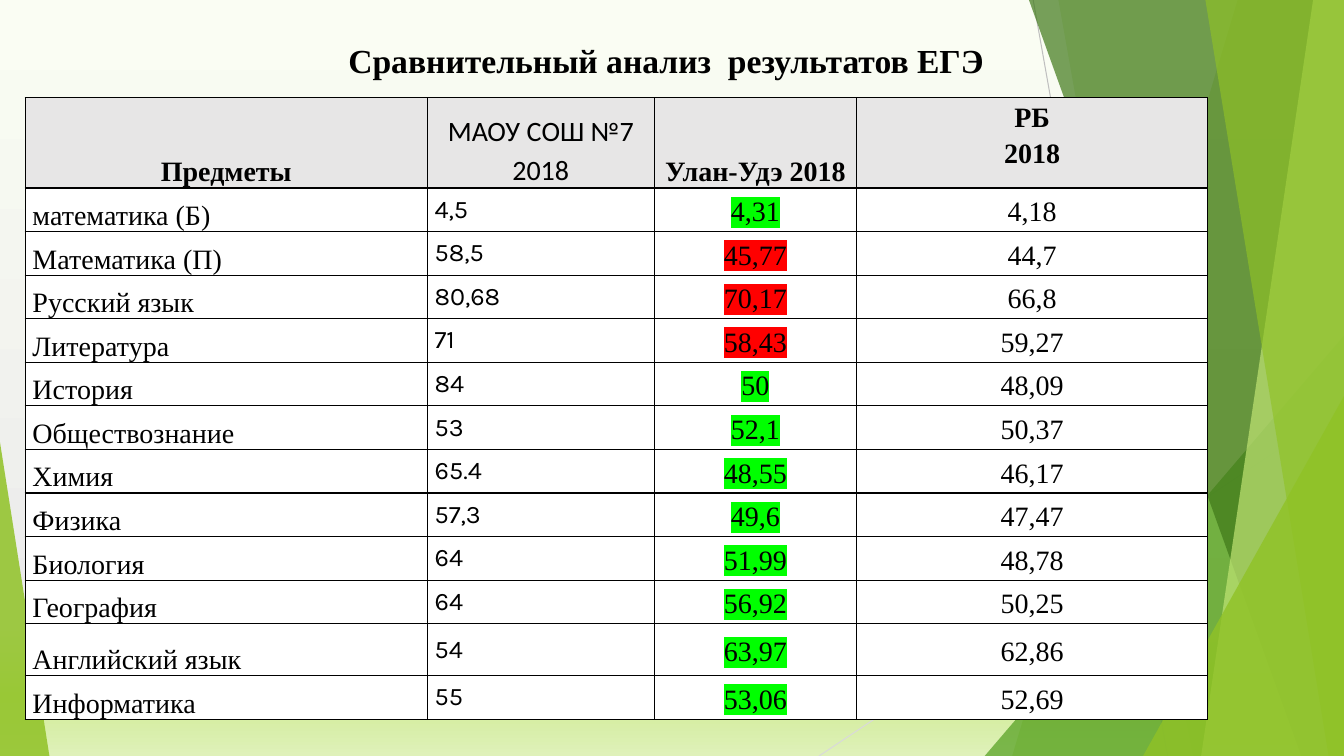
from lxml import etree
from pptx import Presentation
from pptx.dml.color import RGBColor
from pptx.enum.shapes import MSO_CONNECTOR, MSO_SHAPE
from pptx.enum.text import MSO_ANCHOR, MSO_AUTO_SIZE, PP_ALIGN
from pptx.oxml.ns import qn
from pptx.util import Pt

LEFT, MID = PP_ALIGN.LEFT, PP_ALIGN.CENTER
TOP, CENTER, BOTTOM = MSO_ANCHOR.TOP, MSO_ANCHOR.MIDDLE, MSO_ANCHOR.BOTTOM
GROW = MSO_AUTO_SIZE.SHAPE_TO_FIT_TEXT
STRAIGHT = MSO_CONNECTOR.STRAIGHT
TRIANGLE = MSO_SHAPE.ISOSCELES_TRIANGLE

BLACK = RGBColor(0x00, 0x00, 0x00)
WHITE = RGBColor(0xFF, 0xFF, 0xFF)
GRAY = RGBColor(0xE7, 0xE6, 0xE6)
SILVER = RGBColor(0xBF, 0xBF, 0xBF)
PALE = RGBColor(0xD9, 0xD9, 0xD9)
LIME = RGBColor(0x90, 0xC2, 0x26)
LEAF = RGBColor(0x54, 0xA0, 0x21)
MOSS = RGBColor(0x3F, 0x78, 0x19)
MINT = RGBColor(0xC0, 0xE4, 0x74)
GREEN = RGBColor(0x00, 0xFF, 0x00)
RED = RGBColor(0xFF, 0x00, 0x00)
SKY = [
    (0, RGBColor(0xFA, 0xFD, 0xF3)),
    (83, RGBColor(0xEB, 0xEB, 0xEB)),
    (92, RGBColor(0xD0, 0xEB, 0x96)),
    (100, RGBColor(0xDF, 0xF1, 0xB9)),
]

TITLE = "Сравнительный анализ  результатов ЕГЭ "
HEAD = ["Предметы", "МАОУ СОШ №7 2018", "Улан-Удэ 2018", "РБ\n2018"]
SCORES = [
    ("математика (Б)", "4,5", "4,31", "4,18"),
    ("Математика (П)", "58,5", "45,77", "44,7"),
    ("Русский язык", "80,68", "70,17", "66,8"),
    ("Литература", "71", "58,43", "59,27"),
    ("История", "84", "50", "48,09"),
    ("Обществознание", "53", "52,1", "50,37"),
    ("Химия", "65.4", "48,55", "46,17"),
    ("Физика", "57,3", "49,6", "47,47"),
    ("Биология", "64", "51,99", "48,78"),
    ("География", "64", "56,92", "50,25"),
    ("Английский язык", "54", "63,97", "62,86"),
    ("Информатика", "55", "53,06", "52,69"),
]
RED_ROWS = {"Математика (П)", "Русский язык", "Литература"}
TALL_ROW = "Английский язык"

WIDE, HIGH = 960, 540
COLS = [287.3, 162, 144.7, 250.6]
HEAD_H, ROW_H, TALL_H = 64.5, 31.14, 37.2
TABLE_X, TABLE_Y = 18, 69.8

RAYS = [((738, 0), (834, HIGH), SILVER), ((WIDE, 290), (585, HIGH), PALE)]
BANDS = [
    ("band", (884, 723), LIME, 30),
    ("band", (756, 852), LIME, 20),
    ("peak", (703.4, 239.8, 256.6, 300.2, 1), LEAF, 72),
    ("band", (735, 929.5), MOSS, 70),
    ("band", (938, 858), MINT, 70),
    ("band", (861, 949), LIME, 65),
    ("peak", (816.5, 283, 143.5, 257, 1), LIME, 80),
    ("peak", (0, 316, 35.3, 224, 0), LIME, 85),
]

SERIF = {"name": "Times New Roman", "size": Pt(20), "bold": False}
BOLD = SERIF | {"bold": True}
SANS = SERIF | {"name": "Calibri"}
KARLA = {"name": "Karla", "size": Pt(18), "bold": False}
HEAD_FORM = [
    (BOLD, MID, BOTTOM, 1.15),
    (SANS, MID, BOTTOM, 1.15),
    (BOLD, MID, BOTTOM, 1.15),
    (BOLD, MID, TOP, 1.15),
]
BODY_FORM = [
    (SERIF, LEFT, BOTTOM, 1.15),
    (KARLA, LEFT, CENTER, 1),
    (SERIF, MID, CENTER, 1.15),
    (SERIF, MID, CENTER, 1.15),
]
INSET = {"margin_left": Pt(5.2), "margin_right": Pt(5.2),
         "margin_top": 0, "margin_bottom": 0}


def assign(item, form):
    for key, value in form.items():
        setattr(item, key, value)


def add_color(parent, color):
    return etree.SubElement(parent, qn("a:srgbClr"), val=str(color))


def paint_sky(slide):
    fill = slide.background.fill
    fill.gradient()
    fill.gradient_angle = 270
    stops = slide.background._cSld.find(".//" + qn("a:gsLst"))
    for stop in list(stops):
        stops.remove(stop)
    for place, color in SKY:
        stop = etree.SubElement(stops, qn("a:gs"), pos=str(place * 1000))
        add_color(stop, color)


def add_ray(slide, start, end, color):
    ray = slide.shapes.add_connector(STRAIGHT, *map(Pt, start + end))
    ray.line.color.rgb = color
    ray.line.width = Pt(0.75)
    etree.SubElement(ray._element.spPr, qn("a:effectLst"))


def add_band(slide, kind, geom, color, alpha):
    if kind == "band":
        top, foot = geom
        edge = [(WIDE, 0), (WIDE, HIGH), (foot, HIGH)]
        pen = slide.shapes.build_freeform(Pt(top), 0)
        pen.add_line_segments([(Pt(x), Pt(y)) for x, y in edge])
        shape = pen.convert_to_shape()
    else:
        shape = slide.shapes.add_shape(TRIANGLE, *map(Pt, geom[:4]))
        shape.adjustments[0] = geom[4]
    shape.shadow.inherit = False
    shape.fill.solid()
    shape.fill.fore_color.rgb = color
    shape.line.fill.background()
    tone = shape._element.spPr.find(qn("a:solidFill")).find(qn("a:srgbClr"))
    etree.SubElement(tone, qn("a:alpha"), val=str(alpha * 1000))


def write(frame, text, font, align, space, mark=None):
    frame.text = text
    for para in frame.paragraphs:
        assign(para, {"alignment": align, "line_spacing": space})
        for run in para.runs:
            assign(run.font, font)
            run.font.color.rgb = BLACK
            if mark:
                light = etree.Element(qn("a:highlight"))
                add_color(light, mark)
                run._r.rPr.find(qn("a:latin")).addprevious(light)


def add_border(cell):
    props = cell._tc.get_or_add_tcPr()
    for spot, side in enumerate(("lnL", "lnR", "lnT", "lnB")):
        line = etree.Element(qn("a:" + side), w=str(Pt(1)))
        add_color(etree.SubElement(line, qn("a:solidFill")), BLACK)
        props.insert(spot, line)


def add_scores(slide):
    rows = [HEAD, *SCORES]
    highs = [HEAD_H] + [TALL_H if row[0] == TALL_ROW else ROW_H for row in SCORES]
    size = (TABLE_X, TABLE_Y, sum(COLS), sum(highs))
    table = slide.shapes.add_table(len(rows), len(COLS), *map(Pt, size)).table
    assign(table, {"first_row": False, "horz_banding": False})
    for col, wide in zip(table.columns, COLS):
        col.width = Pt(wide)
    for r, (row, high) in enumerate(zip(rows, highs)):
        table.rows[r].height = Pt(high)
        forms = BODY_FORM if r else HEAD_FORM
        for c, (text, form) in enumerate(zip(row, forms)):
            font, align, anchor, space = form
            cell = table.cell(r, c)
            assign(cell, INSET | {"vertical_anchor": anchor})
            cell.fill.solid()
            cell.fill.fore_color.rgb = WHITE if r else GRAY
            mark = None
            if r and c == 2:
                mark = RED if row[0] in RED_ROWS else GREEN
            write(cell.text_frame, text, font, align, space, mark)
            add_border(cell)


def main():
    deck = Presentation()
    assign(deck, {"slide_width": Pt(WIDE), "slide_height": Pt(HIGH)})
    slide = deck.slides.add_slide(deck.slide_layouts[6])
    paint_sky(slide)
    for ray in RAYS:
        add_ray(slide, *ray)
    for band in BANDS:
        add_band(slide, *band)
    title = slide.shapes.add_textbox(*map(Pt, (239, 21, 479.5, 41)))
    frame = title.text_frame
    assign(frame, {"word_wrap": False, "auto_size": GROW})
    write(frame, TITLE, BOLD | {"size": Pt(24)}, MID, 1.15)
    add_scores(slide)
    deck.save("out.pptx")


if __name__ == "__main__":
    main()
